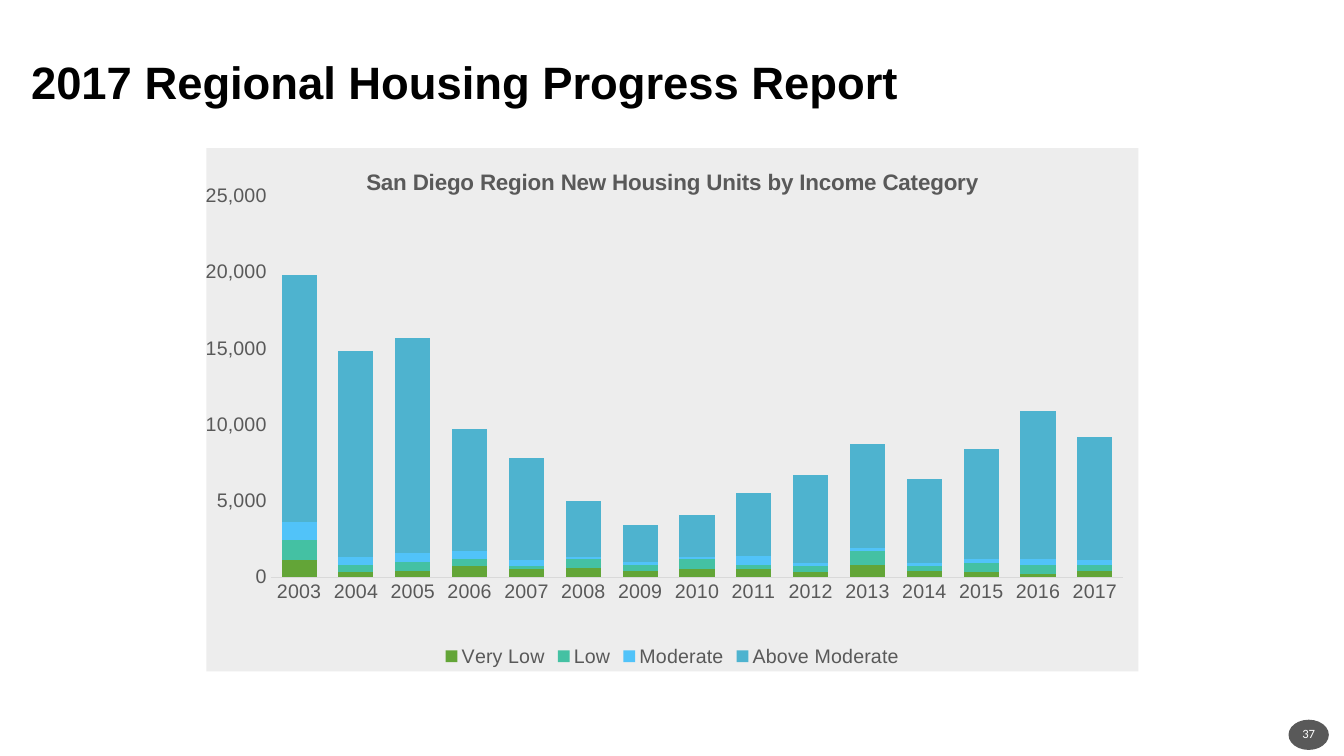
from dataclasses import dataclass

from lxml.etree import SubElement
from pptx import Presentation
from pptx.chart.axis import _BaseAxis as Axis
from pptx.chart.chart import Chart
from pptx.chart.data import CategoryChartData as ChartData
from pptx.dml.color import RGBColor
from pptx.enum.chart import XL_CHART_TYPE as ChartType
from pptx.enum.chart import XL_LEGEND_POSITION as LegendPosition
from pptx.enum.chart import XL_TICK_MARK as TickMark
from pptx.enum.shapes import MSO_SHAPE as ShapeKind
from pptx.enum.text import MSO_ANCHOR as Anchor
from pptx.enum.text import PP_ALIGN as Align
from pptx.oxml import parse_xml
from pptx.oxml.ns import nsdecls, qn
from pptx.slide import Slide
from pptx.text.text import Font
from pptx.util import Inches, Pt

BLACK = RGBColor(0x00, 0x00, 0x00)
WHITE = RGBColor(0xFF, 0xFF, 0xFF)
GRAY = RGBColor(0x59, 0x59, 0x59)
AXIS_GRAY = RGBColor(0xD9, 0xD9, 0xD9)
PANEL_GRAY = RGBColor(0xED, 0xED, 0xED)
GREEN = RGBColor(0x63, 0xA5, 0x37)
TEAL = RGBColor(0x44, 0xC1, 0xA3)
SKY = RGBColor(0x51, 0xC3, 0xF9)
BLUE = RGBColor(0x4E, 0xB3, 0xCF)

YEARS = [str(year) for year in range(2003, 2018)]


@dataclass
class TextStyle:
    size: float
    color: RGBColor
    name: str = "Arial"
    bold: bool = False


@dataclass
class Label:
    text: str
    box: tuple[float, float, float, float]
    style: TextStyle
    align: Align = Align.LEFT
    anchor: Anchor = Anchor.TOP
    spacing: float = 1.0


@dataclass
class IncomeCategory:
    name: str
    color: RGBColor
    units: list[int]


CHART_STYLE = TextStyle(14, GRAY)
LABELS = [
    Label("2017 Regional Housing Progress Report", (0.21, 0.55, 12.2, 0.76),
          TextStyle(32.4, BLACK, bold=True), spacing=0.9),
    Label("37", (12.75, 7.08, 0.46, 0.4), TextStyle(9, WHITE, "Calibri"),
          Align.CENTER, Anchor.MIDDLE),
]
CATEGORIES = [
    IncomeCategory("Very Low", GREEN, [
        1100, 300, 400, 700, 500, 600, 400, 500, 500, 300, 800, 400, 300, 200, 400]),
    IncomeCategory("Low", TEAL, [
        1300, 500, 600, 500, 200, 600, 400, 700, 300, 400, 900, 300, 600, 600, 400]),
    IncomeCategory("Moderate", SKY, [
        1200, 500, 600, 500, 400, 100, 200, 100, 600, 200, 200, 200, 300, 400, 300]),
    IncomeCategory("Above Moderate", BLUE, [
        16200, 13500, 14100, 8000, 6700, 3700, 2400, 2800, 4100, 5800, 6800, 5500,
        7200, 9700, 8100]),
]


def apply_style(font: Font, style: TextStyle) -> None:
    font.name = style.name
    font.size = Pt(style.size)
    font.bold = style.bold
    font.color.rgb = style.color


def add_label(slide: Slide, label: Label) -> None:
    frame = slide.shapes.add_textbox(*map(Inches, label.box)).text_frame
    frame.word_wrap = True
    frame.vertical_anchor = label.anchor
    paragraph = frame.paragraphs[0]
    paragraph.alignment = label.align
    paragraph.line_spacing = label.spacing
    run = paragraph.add_run()
    run.text = label.text
    apply_style(run.font, label.style)


def add_number_badge(slide: Slide) -> None:
    badge = slide.shapes.add_shape(
        ShapeKind.OVAL, Inches(12.78), Inches(7.14), Inches(0.4), Inches(0.3))
    badge.shadow.inherit = False
    badge.fill.solid()
    badge.fill.fore_color.rgb = GRAY
    badge.line.fill.background()


def style_axis(axis: Axis) -> None:
    axis.major_tick_mark = axis.minor_tick_mark = TickMark.NONE
    axis.has_major_gridlines = False
    apply_style(axis.tick_labels.font, CHART_STYLE)


def fill_chart_area(chart: Chart, color: RGBColor) -> None:
    area = parse_xml(
        f'<c:spPr {nsdecls("c", "a")}><a:solidFill><a:srgbClr val="{color}"/>'
        '</a:solidFill><a:ln><a:noFill/></a:ln></c:spPr>')
    chart.element.find(qn("c:chart")).addnext(area)


def place_plot(chart: Chart, x: float, y: float, w: float, h: float) -> None:
    plot_area = chart.element.find(qn("c:chart")).find(qn("c:plotArea"))
    for layout in plot_area.findall(qn("c:layout")):
        plot_area.remove(layout)
    layout = parse_xml(f'<c:layout {nsdecls("c")}/>')
    manual = SubElement(layout, qn("c:manualLayout"))
    settings = {"layoutTarget": "inner", "xMode": "edge", "yMode": "edge",
                "x": x, "y": y, "w": w, "h": h}
    for tag, value in settings.items():
        SubElement(manual, qn(f"c:{tag}")).set("val", str(value))
    plot_area.insert(0, layout)


def add_housing_chart(slide: Slide) -> None:
    data = ChartData(number_format="#,##0")
    data.categories = YEARS
    for category in CATEGORIES:
        data.add_series(category.name, category.units)
    chart = slide.shapes.add_chart(
        ChartType.COLUMN_STACKED, Inches(2.04), Inches(1.47), Inches(9.25),
        Inches(5.19), data).chart
    apply_style(chart.font, TextStyle(10, BLACK))
    fill_chart_area(chart, PANEL_GRAY)
    place_plot(chart, 0.069, 0.091, 0.915, 0.729)

    # Title and legend
    chart.has_title = True
    run = chart.chart_title.text_frame.paragraphs[0].add_run()
    run.text = "San Diego Region New Housing Units by Income Category"
    apply_style(run.font, TextStyle(16, GRAY, bold=True))
    chart.has_legend = True
    chart.legend.position = LegendPosition.BOTTOM
    chart.legend.include_in_layout = False
    apply_style(chart.legend.font, CHART_STYLE)

    # Axes
    style_axis(chart.category_axis)
    chart.category_axis.format.line.color.rgb = AXIS_GRAY
    chart.category_axis.format.line.width = Pt(0.75)
    style_axis(chart.value_axis)
    chart.value_axis.format.line.fill.background()
    chart.value_axis.minimum_scale = 0
    chart.value_axis.maximum_scale = 25000
    chart.value_axis.major_unit = 5000
    chart.value_axis.tick_labels.number_format = "#,##0"
    chart.value_axis.tick_labels.number_format_is_linked = False

    # Columns
    plot = chart.plots[0]
    plot.gap_width = 62
    plot.overlap = 100
    plot.vary_by_categories = False
    for series, category in zip(plot.series, CATEGORIES):
        series.format.fill.solid()
        series.format.fill.fore_color.rgb = category.color


def main() -> None:
    presentation = Presentation()
    presentation.slide_width = Inches(13.33)
    presentation.slide_height = Inches(7.5)
    slide = presentation.slides.add_slide(presentation.slide_layouts[6])
    add_number_badge(slide)
    for label in LABELS:
        add_label(slide, label)
    add_housing_chart(slide)
    presentation.save("out.pptx")


if __name__ == "__main__":
    main()
